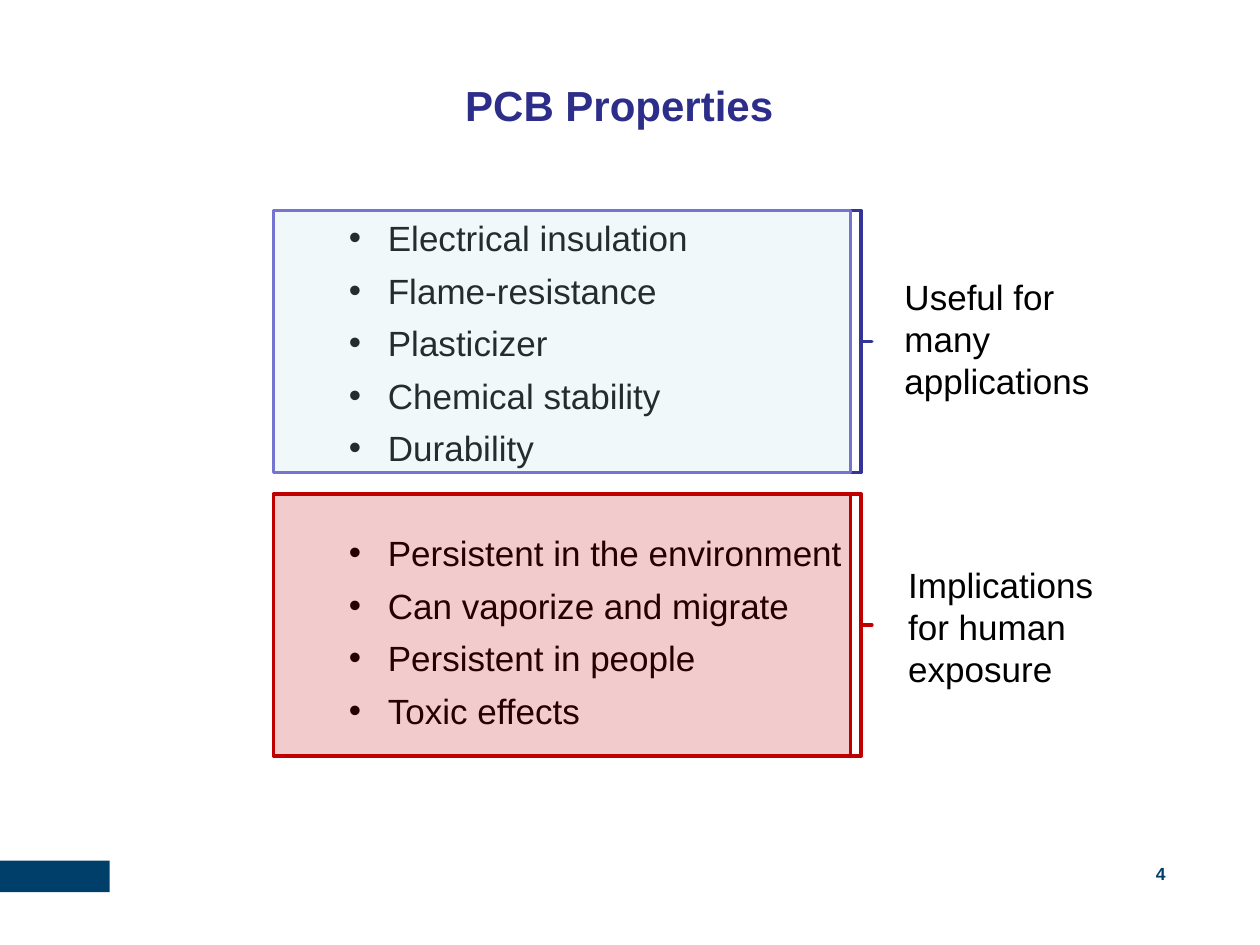
from lxml.etree import SubElement
from pptx import Presentation
from pptx.dml.color import RGBColor
from pptx.enum.shapes import MSO_SHAPE as Shape
from pptx.enum.text import MSO_ANCHOR as Anchor, PP_ALIGN as Align
from pptx.oxml.ns import qn
from pptx.util import Inches, Pt

BOX_LEFT, BOX_WIDTH, BOX_HEIGHT = 2.17, 4.58, 2.08
BRACE_WIDTH = 0.17
LIST_LEFT, LIST_WIDTH = 2.67, 6.58
GROUPS = [
    dict(top=1.67, list_gap=0, line="7575D1", fill="BBE0E3", brace="333399",
         items=["Electrical insulation", "Flame-resistance", "Plasticizer",
                "Chemical stability", "Durability"],
         note="Useful for many applications", note_at=(7.08, 2.14, 1.75, 1.11)),
    dict(top=3.92, list_gap=0.25, line="C00000", fill="C00000", brace="C00000",
         items=["Persistent in the environment", "Can vaporize and migrate",
                "Persistent in people", "Toxic effects"],
         note="Implications for human exposure", note_at=(7.11, 4.42, 2, 1.11)),
]


def color(code):
    return RGBColor.from_string(code)


def place(shape, at):
    shape.left, shape.top, shape.width, shape.height = map(Inches, at)


def add_bullet(para, indent=0.31):
    props = para._p.get_or_add_pPr()
    props.set("marL", str(Inches(indent)))
    props.set("indent", str(-Inches(indent)))
    SubElement(props, qn("a:buFont"), typeface="Arial")
    SubElement(props, qn("a:buChar"), char="•")


def write(shape, lines, size=20, ink="000000", bold=False, align=Align.LEFT,
          anchor=Anchor.TOP, bullets=False, after=0, spacing=None, wrap=True,
          inset=None):
    frame = shape.text_frame
    frame.word_wrap = wrap
    frame.vertical_anchor = anchor
    if inset is not None:
        frame.margin_left = frame.margin_right = Inches(inset)
        frame.margin_top = frame.margin_bottom = Inches(inset)
    for i, line in enumerate(lines):
        para = frame.paragraphs[0] if i == 0 else frame.add_paragraph()
        para.alignment = align
        para.space_before, para.space_after = Pt(0), Pt(after)
        para.line_spacing = spacing
        if bullets:
            add_bullet(para)
        run = para.add_run()
        run.text = line
        font = run.font
        font.name, font.size, font.bold = "Arial", Pt(size), bold
        font.color.rgb = color(ink)


def add_text(slide, at, lines, **style):
    box = slide.shapes.add_textbox(*map(Inches, at))
    write(box, lines, **style)


def add_form(slide, kind, at, fill=None, line=None, alpha=None):
    form = slide.shapes.add_shape(kind, *map(Inches, at))
    form.shadow.inherit = False
    if fill:
        form.fill.solid()
        form.fill.fore_color.rgb = color(fill)
    else:
        form.fill.background()
    if alpha:
        tint = form._element.spPr.find(".//" + qn("a:srgbClr"))
        SubElement(tint, qn("a:alpha"), val=str(alpha * 1000))
    if line:
        form.line.color.rgb = color(line)
        form.line.width = Pt(2)
    else:
        form.line.fill.background()
    return form


def add_group(slide, group):
    """Draw a bullet list under a tinted box, with a brace and its note."""
    top = group["top"]
    add_text(slide, (LIST_LEFT, top + group["list_gap"], LIST_WIDTH, BOX_HEIGHT),
             group["items"], bullets=True, after=6)
    brace = add_form(slide, Shape.RIGHT_BRACE,
                     (BOX_LEFT + BOX_WIDTH, top, BRACE_WIDTH, BOX_HEIGHT),
                     line=group["brace"])
    brace.adjustments[0], brace.adjustments[1] = 0, 0.5
    add_text(slide, group["note_at"], [group["note"]])
    add_form(slide, Shape.RECTANGLE, (BOX_LEFT, top, BOX_WIDTH, BOX_HEIGHT),
             fill=group["fill"], line=group["line"], alpha=20)


def main():
    deck = Presentation()
    deck.slide_width, deck.slide_height = Inches(10), Inches(7.5)
    slide = deck.slides.add_slide(deck.slide_layouts[5])
    add_form(slide, Shape.RECTANGLE, (0, 6.83, 0.87, 0.25), fill="003F69")
    add_text(slide, (7.17, 6.81, 2.08, 0.25), ["4"], size=10, ink="003F69",
             bold=True, align=Align.RIGHT, anchor=Anchor.MIDDLE, inset=0)
    title = slide.shapes.title
    place(title, (3.58, 0.58, 2.67, 0.5))
    write(title, ["PCB Properties"], size=24, ink="2D2D8A", bold=True,
          align=Align.CENTER, wrap=False)
    for group in GROUPS:
        add_group(slide, group)
    deck.save("out.pptx")


if __name__ == "__main__":
    main()
